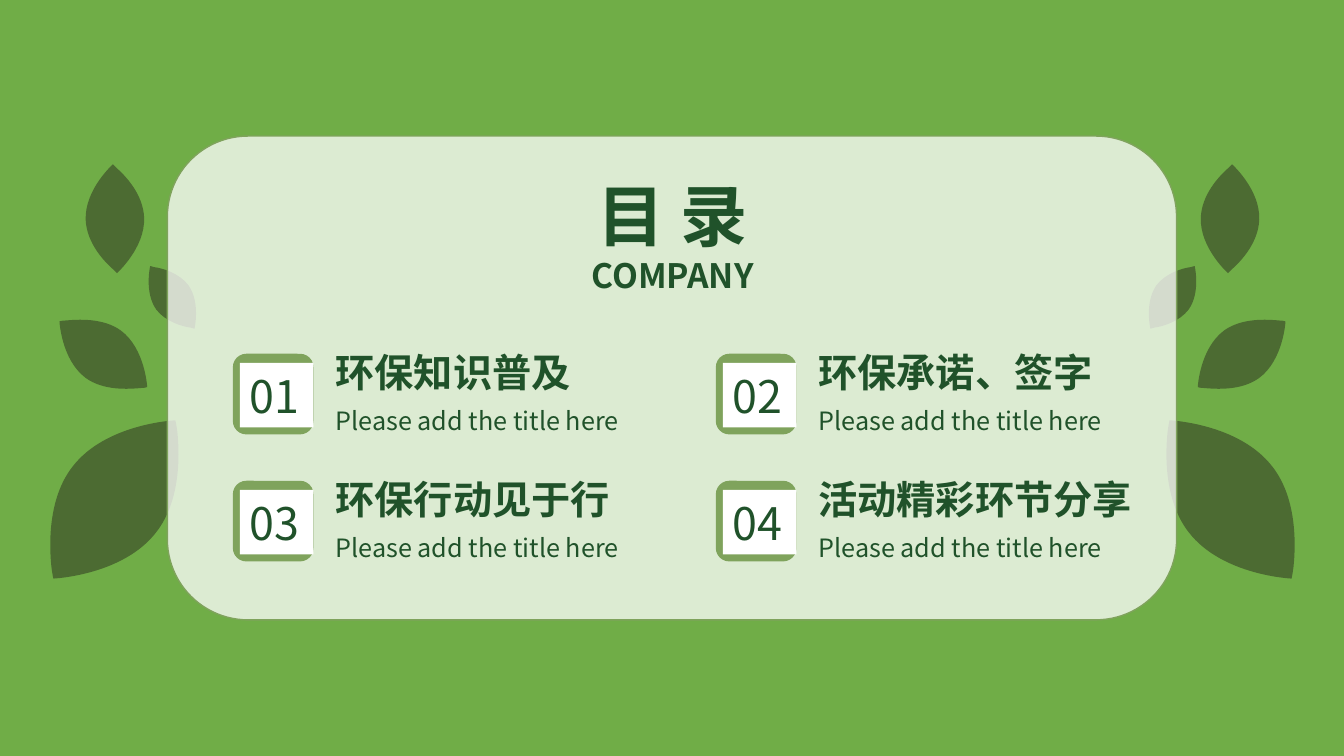
"""Build the green contents slide with leaves, a translucent panel and four entries."""
from lxml.etree import SubElement
from pptx import Presentation
from pptx.dml.color import RGBColor
from pptx.enum.shapes import MSO_SHAPE
from pptx.enum.text import MSO_ANCHOR, PP_ALIGN
from pptx.oxml.ns import qn
from pptx.util import Pt

PX = 9144
SLIDE_WIDTH, SLIDE_HEIGHT = 1333, 750
MIRROR_SUM = 1334
FONT = "Noto Sans CJK SC"
GREEN, LEAF, FRAME, INK, WHITE = "70AD47", "4C6B32", "7FA35C", "20522A", "FFFFFF"


def paint(shape, color):
    shape.shadow.inherit = False
    shape.fill.solid()
    shape.fill.fore_color.rgb = RGBColor.from_string(color)
    shape.line.fill.background()


def write(shape, lines, align=PP_ALIGN.LEFT, wrap=False):
    frame = shape.text_frame
    frame.word_wrap = wrap
    frame.vertical_anchor = MSO_ANCHOR.MIDDLE
    frame.text = "\n".join(text for text, size, bold in lines)
    for paragraph, (text, size, bold) in zip(frame.paragraphs, lines):
        paragraph.alignment = align
        run = paragraph.runs[0]
        run.font.size, run.font.bold, run.font.name = Pt(size), bold, FONT
        run.font.color.rgb = RGBColor.from_string(INK)
        SubElement(run.font._element, qn("a:ea"), typeface=FONT)


deck = Presentation()
deck.slide_width, deck.slide_height = SLIDE_WIDTH * PX, SLIDE_HEIGHT * PX
slide = deck.slides.add_slide(deck.slide_layouts[6])
slide.background.fill.solid()
slide.background.fill.fore_color.rgb = RGBColor.from_string(GREEN)

# Each leaf side runs from one tip to the other; the far side is its half turn.
leaf_sides = [
    [(1275, 319), (1275, 319), (1273, 318), (1269, 318), (1257, 317), (1232, 315), (1214, 328),
     (1190, 346), (1188, 384), (1188, 384)],
    [(1222, 163), (1222, 163), (1221, 164), (1218, 167), (1209, 175), (1192, 193), (1191, 216),
     (1190, 246), (1218, 271), (1218, 271)],
    [(1185, 264), (1185, 264), (1184, 264), (1181, 265), (1173, 266), (1156, 271), (1147, 283),
     (1135, 300), (1141, 326), (1141, 326)],
    [(1160, 417), (1160, 417), (1159, 421), (1158, 429), (1156, 449), (1154, 496), (1179, 528),
     (1212, 571), (1281, 574), (1281, 574)],
]
for mirrored in (False, True):
    branch = slide.shapes.add_group_shape()
    for side in leaf_sides:
        (tip_x, tip_y), (end_x, end_y) = side[0], side[-1]
        outline = side + [(tip_x + end_x - x, tip_y + end_y - y) for x, y in side[1:]]
        if mirrored:
            outline = [(MIRROR_SUM - x, y) for x, y in outline]
        builder = branch.shapes.build_freeform(*outline[0], scale=PX)
        builder.add_line_segments(outline[1:], close=True)
        leaf = builder.convert_to_shape()
        paint(leaf, LEAF)
        segments = leaf._element.xpath(".//a:lnTo")
        for first, second, third in zip(segments[::3], segments[1::3], segments[2::3]):
            first.tag = qn("a:cubicBezTo")
            for control in (second, third):
                first.append(control[0])
                control.getparent().remove(control)

panel = slide.shapes.add_shape(
    MSO_SHAPE.ROUNDED_RECTANGLE, 166 * PX, 135 * PX, 1001 * PX, 480 * PX)
paint(panel, WHITE)
SubElement(panel._element.xpath("./p:spPr/a:solidFill/a:srgbClr")[0], qn("a:alpha"), val="76000")
panel.line.color.rgb = RGBColor.from_string(FRAME)
panel.line.width = Pt(1)

title = slide.shapes.add_textbox(567 * PX, 167 * PX, 200 * PX, 131 * PX)
write(title, [("目 录", 48, True), ("COMPANY", 24, True)], PP_ALIGN.CENTER)

headings = ["环保知识普及", "环保承诺、签字", "环保行动见于行", "活动精彩环节分享"]
for index, heading in enumerate(headings):
    row, column = divmod(index, 2)
    left, top = 231 + 479 * column, 351 + 126 * row
    entry = slide.shapes.add_group_shape().shapes

    badge = entry.add_shape(
        MSO_SHAPE.ROUNDED_RECTANGLE, left * PX, top * PX, 80 * PX, 80 * PX)
    paint(badge, FRAME)

    number = entry.add_shape(
        MSO_SHAPE.RECTANGLE, (left + 7) * PX, (top + 9) * PX, 73 * PX, 64 * PX)
    paint(number, WHITE)
    write(number, [(f"{index + 1:02}", 32, False)])

    subtitle = entry.add_textbox((left + 92) * PX, (top + 46) * PX, 313 * PX, 40 * PX)
    write(subtitle, [("Please add the title here", 18, False)])

    name = entry.add_textbox((left + 92) * PX, (top - 11) * PX, 360 * PX, 57 * PX)
    write(name, [(heading, 28, True)], wrap=True)

deck.save("out.pptx")
